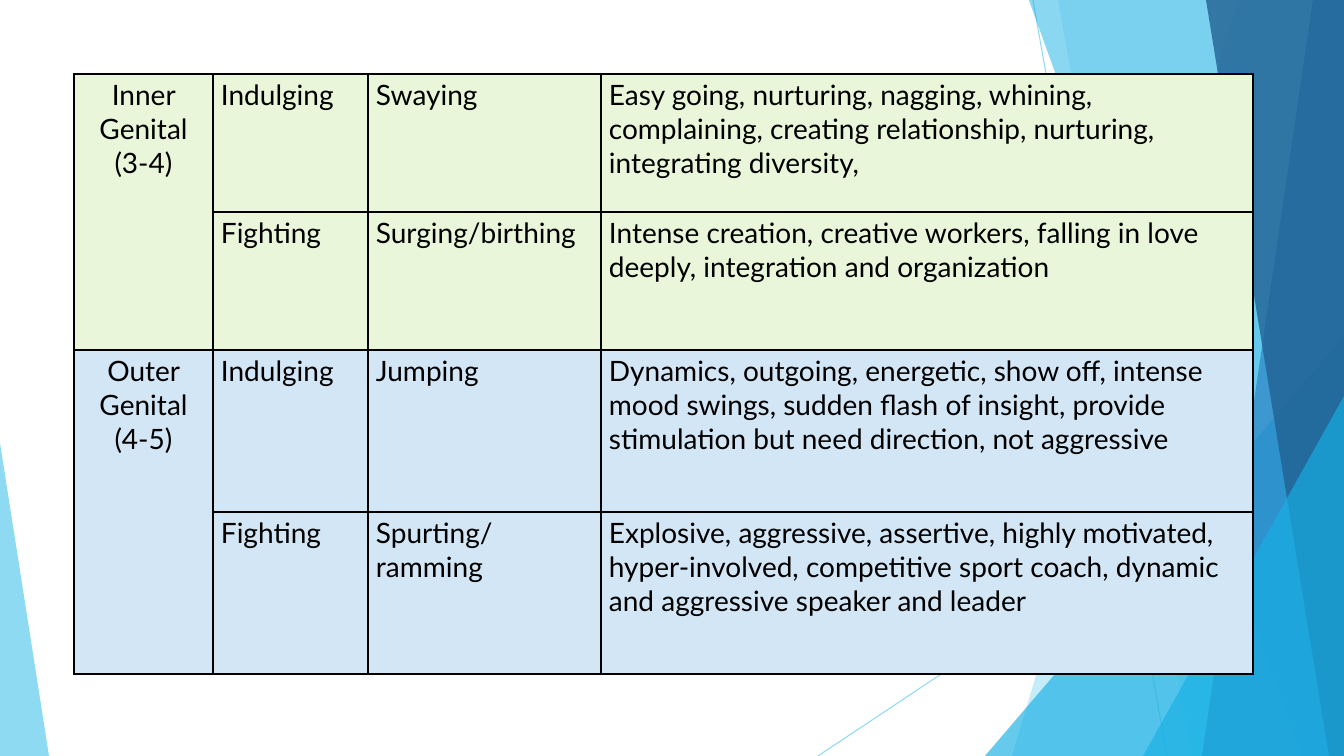
from lxml import etree
from pptx import Presentation
from pptx.dml.color import RGBColor
from pptx.enum.shapes import MSO_CONNECTOR, MSO_SHAPE
from pptx.enum.text import PP_ALIGN
from pptx.oxml.ns import qn
from pptx.util import Pt

CENTER, LEFT = PP_ALIGN.CENTER, PP_ALIGN.LEFT
TRIANGLE = MSO_SHAPE.ISOSCELES_TRIANGLE
STRAIGHT = MSO_CONNECTOR.STRAIGHT

WIDTH, HEIGHT = 1344, 756
EMU_PER_PX = 914400 / 100.8

COLORS = {
    "sky": "5FCBEF",
    "cyan": "17B0E4",
    "blue": "2E83C3",
    "navy": "226292",
    "inner": "EAF6D9",
    "outer": "D3E6F5",
    "text": "000000",
    "border": "000000",
}


def emu(px):
    return round(px * EMU_PER_PX)


class SlideBuilder:
    font = "Lato"
    text_size = Pt(20)
    margin_x, margin_y = 8, 4

    def __init__(self, slide):
        self.slide = slide
        self.shapes = slide.shapes

    def color(self, name):
        return RGBColor.from_string(COLORS[name])

    def set_opacity(self, shape, percent):
        for color in shape._element.spPr.iter(qn("a:srgbClr")):
            etree.SubElement(color, qn("a:alpha"), val=str(percent * 1000))

    def paint(self, shape, fill, opacity):
        shape.shadow.inherit = False
        shape.fill.solid()
        shape.fill.fore_color.rgb = self.color(fill)
        shape.line.fill.background()
        self.set_opacity(shape, opacity)

    def thin_line(self, start, end, color, opacity):
        line = self.shapes.add_connector(STRAIGHT, *map(emu, start + end))
        line.line.color.rgb = self.color(color)
        line.line.width = Pt(0.75)
        self.set_opacity(line, opacity)
        etree.SubElement(line._element.spPr, qn("a:effectLst"))

    def band(self, top_x, bottom_x, fill, opacity):
        """Full-height band from a slanted left edge to the right slide edge."""
        outline = self.shapes.build_freeform(emu(top_x), 0)
        corners = [(WIDTH, 0), (WIDTH, HEIGHT), (bottom_x, HEIGHT)]
        outline.add_line_segments([(emu(x), emu(y)) for x, y in corners])
        self.paint(outline.convert_to_shape(), fill, opacity)

    def wedge(self, left, top, width, apex, fill, opacity):
        """Triangle standing on the bottom slide edge."""
        box = (left, top, width, HEIGHT - top)
        triangle = self.shapes.add_shape(TRIANGLE, *map(emu, box))
        triangle.adjustments[0] = apex
        self.paint(triangle, fill, opacity)

    def cell(self, cell, text, fill, align):
        cell.margin_left = cell.margin_right = emu(self.margin_x)
        cell.margin_top = cell.margin_bottom = emu(self.margin_y)
        properties = cell._tc.get_or_add_tcPr()
        for side in ("lnL", "lnR", "lnT", "lnB"):
            border = etree.SubElement(properties, qn(f"a:{side}"), w=str(Pt(1)))
            solid = etree.SubElement(border, qn("a:solidFill"))
            etree.SubElement(solid, qn("a:srgbClr"), val=COLORS["border"])
        cell.fill.solid()
        cell.fill.fore_color.rgb = self.color(fill)
        paragraph = cell.text_frame.paragraphs[0]
        paragraph.text = text
        paragraph.alignment = align
        for run in paragraph.runs:
            run.font.name = self.font
            run.font.size = self.text_size
            run.font.color.rgb = self.color("text")

    def table(self, left, top, columns, rows, groups):
        box = (left, top, sum(columns), sum(rows))
        table = self.shapes.add_table(
            len(rows), len(columns), *map(emu, box)).table
        table.first_row = table.horz_banding = False
        for column, width in zip(table.columns, columns):
            column.width = emu(width)
        for row, height in zip(table.rows, rows):
            row.height = emu(height)
        row_index = 0
        for stage, fill, traits in groups:
            first = row_index
            for trait in traits:
                label = stage if row_index == first else ""
                for col, text in enumerate((label, *trait)):
                    self.cell(table.cell(row_index, col), text, fill,
                              LEFT if col else CENTER)
                row_index += 1
            table.cell(first, 0).merge(table.cell(row_index - 1, 0))


STAGES = [
    ("Inner Genital (3-4)", "inner", [
        ("Indulging", "Swaying",
         "Easy going, nurturing, nagging, whining, complaining, creating "
         "relationship, nurturing, integrating diversity,"),
        ("Fighting", "Surging/birthing",
         "Intense creation, creative workers, falling in love deeply, "
         "integration and organization"),
    ]),
    ("Outer Genital (4-5)", "outer", [
        ("Indulging", "Jumping",
         "Dynamics, outgoing, energetic, show off, intense mood swings, "
         "sudden flash of insight, provide stimulation but need direction, "
         "not aggressive"),
        ("Fighting", "Spurting/ramming",
         "Explosive, aggressive, assertive, highly motivated, hyper-involved, "
         "competitive sport coach, dynamic and aggressive speaker and leader"),
    ]),
]


def main():
    deck = Presentation()
    deck.slide_width, deck.slide_height = emu(WIDTH), emu(HEIGHT)
    builder = SlideBuilder(deck.slides.add_slide(deck.slide_layouts[6]))

    # Faceted background, back to front
    builder.thin_line((1033, 0), (1167, HEIGHT), "sky", 70)
    builder.thin_line((WIDTH, 406), (818, HEIGHT), "sky", 70)
    builder.band(1238, 1012, "sky", 36)
    builder.band(1058, 1192, "sky", 20)
    builder.wedge(985, 336, 359, 1, "cyan", 66)
    builder.band(1029, 1301, "cyan", 50)
    builder.band(1313, 1202, "blue", 70)
    builder.band(1206, 1329, "navy", 80)
    builder.wedge(1143, 396, 201, 1, "cyan", 66)
    builder.wedge(0, 443, 49, 0, "sky", 70)

    # Stages and their traits
    builder.table(74, 74, [139, 155, 233, 652], [138, 138, 162, 162], STAGES)

    deck.save("out.pptx")


if __name__ == "__main__":
    main()
